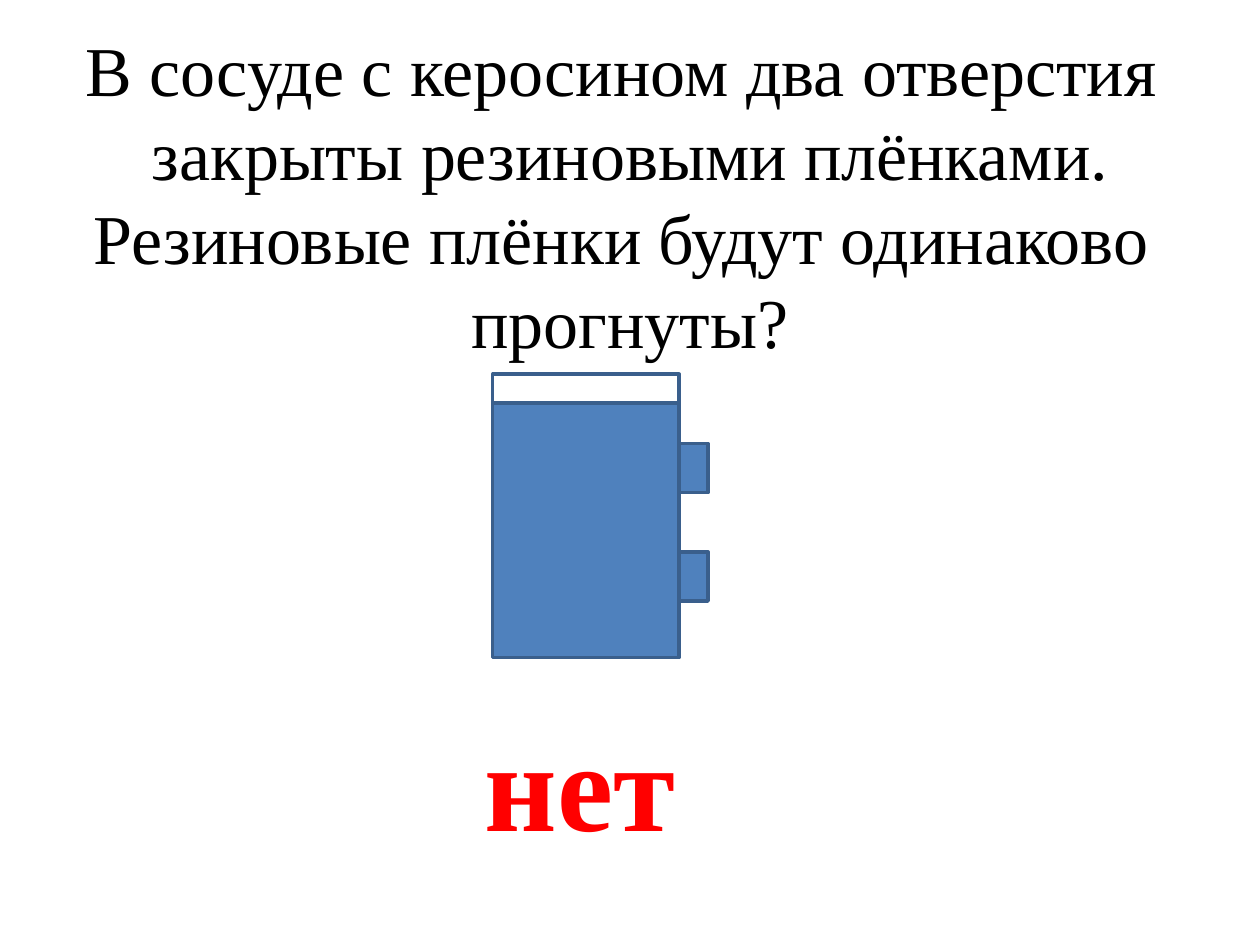
import pptx
import pptx.util
import pptx.dml.color
import pptx.enum.shapes
import pptx.enum.text
from dataclasses import dataclass

Inches, Pt = pptx.util.Inches, pptx.util.Pt
RGB = pptx.dml.color.RGBColor.from_string


@dataclass(frozen=True)
class Theme:
    font: str = "Times New Roman"
    text: str = "000000"
    answer: str = "FF0000"
    empty: str = "FFFFFF"
    kerosene: str = "4F81BD"
    outline: str = "3A5F8C"
    line_width: float = 2
    question_size: int = 40
    answer_size: int = 72


THEME = Theme()


def add_text(s, box, lines, size, color, bold=False, align=None, wrap=True):
    tf = s.shapes.add_textbox(*map(Inches, box)).text_frame
    tf.word_wrap = wrap
    tf.auto_size = pptx.enum.text.MSO_AUTO_SIZE.SHAPE_TO_FIT_TEXT
    for i, line in enumerate(lines):
        p = tf.paragraphs[0] if i == 0 else tf.add_paragraph()
        p.text = line
        p.alignment = align
        p.font.name = THEME.font
        p.font.size = Pt(size)
        p.font.bold = bold
        p.font.color.rgb = RGB(color)


def add_rect(shapes, box, fill):
    sp = shapes.add_shape(pptx.enum.shapes.MSO_SHAPE.RECTANGLE, *map(Inches, box))
    sp.shadow.inherit = False
    sp.fill.solid()
    sp.fill.fore_color.rgb = RGB(fill)
    sp.line.color.rgb = RGB(THEME.outline)
    sp.line.width = Pt(THEME.line_width)


def add_question(s, box):
    add_text(s, box, [
        "В сосуде с керосином два отверстия  закрыты резиновыми плёнками.",
        "Резиновые плёнки будут одинаково  прогнуты?",
    ], THEME.question_size, THEME.text, align=pptx.enum.text.PP_ALIGN.CENTER)


def add_vessel(s, box):
    left, top, width, height = box
    air = 0.23
    outlet_w, outlet_h = 0.23, 0.39
    body_w, body_h = width - outlet_w, height - air
    shapes = s.shapes.add_group_shape().shapes

    # Vessel wall, then the kerosene below the air gap
    add_rect(shapes, (left, top, body_w, body_h), THEME.empty)
    add_rect(shapes, (left, top + air, body_w, body_h), THEME.kerosene)

    # Two outlets on the right side
    for depth in (0.55, 1.41):
        add_rect(shapes, (left + body_w, top + depth, outlet_w, outlet_h), THEME.kerosene)


def add_answer(s, box):
    add_text(s, box, ["нет"], THEME.answer_size, THEME.answer, bold=True, wrap=False)


def main():
    prs = pptx.Presentation()
    prs.slide_width, prs.slide_height = Inches(10), Inches(7.5)
    s = prs.slides.add_slide(prs.slide_layouts[6])
    add_question(s, (0, 0.16, 10, 2.79))
    add_vessel(s, (3.91, 2.97, 1.71, 2.25))
    add_answer(s, (3.75, 5.55, 1.73, 1.31))
    prs.save("out.pptx")


if __name__ == "__main__":
    main()
